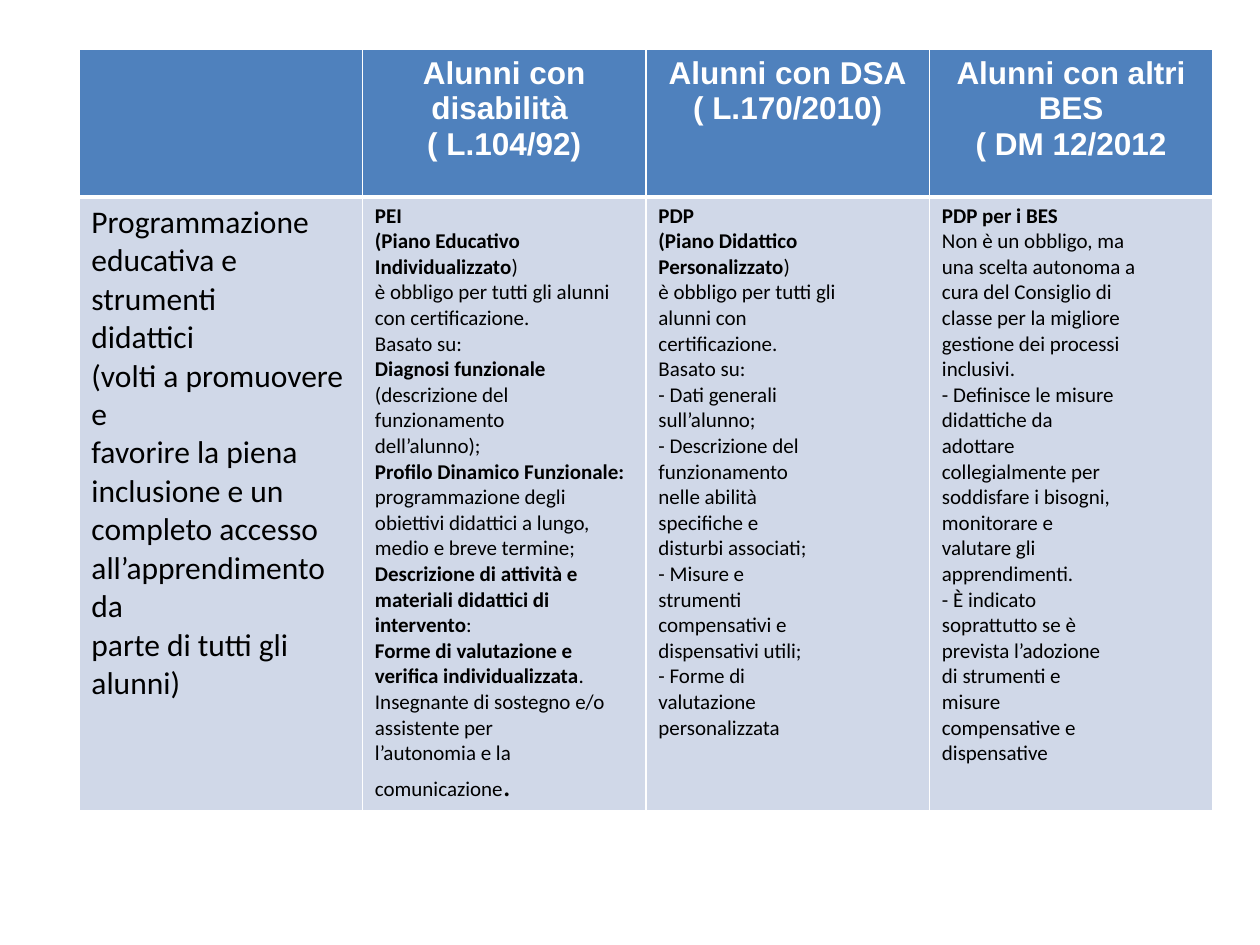
from dataclasses import dataclass

from lxml import etree
from pptx import Presentation
from pptx.dml.color import RGBColor
from pptx.enum.text import PP_ALIGN
from pptx.oxml.ns import qn
from pptx.table import _Cell
from pptx.text.text import _Paragraph
from pptx.util import Cm, Pt

CENTER = PP_ALIGN.CENTER
LEFT = PP_ALIGN.LEFT
BLUE = RGBColor(0x4F, 0x81, 0xBD)
PALE = RGBColor(0xD0, 0xD8, 0xE8)
WHITE = RGBColor(0xFF, 0xFF, 0xFF)
BLACK = RGBColor(0, 0, 0)
BOLD = "*"


@dataclass(frozen=True)
class Style:
    font: str
    size: int
    color: RGBColor
    fill: RGBColor
    align: PP_ALIGN
    edges: dict[str, int]


@dataclass(frozen=True)
class Entry:
    text: str
    style: Style


HEAD = Style("Arial", 18, WHITE, BLUE, CENTER, {"L": 1, "R": 1, "T": 1, "B": 3})
BODY_EDGES = {"L": 1, "R": 1, "T": 3, "B": 1}
LABEL = Style("Calibri", 18, BLACK, PALE, LEFT, BODY_EDGES)
BODY = Style("Calibri", 12, BLACK, PALE, LEFT, BODY_EDGES)

GOAL = """Programmazione
educativa e strumenti
didattici
(volti a promuovere e
favorire la piena
inclusione e un
completo accesso
all’apprendimento da
parte di tutti gli alunni)"""

PEI = """*PEI*
*(Piano Educativo*
*Individualizzato*)
è obbligo per tutti gli alunni
con certificazione.
Basato su:
*Diagnosi funzionale*
(descrizione del
funzionamento
dell’alunno);
*Profilo Dinamico Funzionale:*
programmazione degli
obiettivi didattici a lungo,
medio e breve termine;
*Descrizione di attività e*
*materiali didattici di*
*intervento*:
*Forme di valutazione e*
*verifica individualizzata*.
Insegnante di sostegno e/o
assistente per
l’autonomia e la
comunicazione"""

PDP = """*PDP*
*(Piano Didattico*
*Personalizzato*)
è obbligo per tutti gli
alunni con
certificazione.
Basato su:
- Dati generali
sull’alunno;
- Descrizione del
funzionamento
nelle abilità
specifiche e
disturbi associati;
- Misure e
strumenti
compensativi e
dispensativi utili;
- Forme di
valutazione
personalizzata"""

BES = """*PDP per i BES*
Non è un obbligo, ma
una scelta autonoma a
cura del Consiglio di
classe per la migliore
gestione dei processi
inclusivi.
- Definisce le misure
didattiche da
adottare
collegialmente per
soddisfare i bisogni,
monitorare e
valutare gli
apprendimenti.
- È indicato
soprattutto se è
prevista l’adozione
di strumenti e
misure
compensative e
dispensative"""

ROWS = [
    [
        Entry("", HEAD),
        Entry("*Alunni con disabilità *\n*( L.104/92)*", HEAD),
        Entry("*Alunni con DSA*\n*( L.170/2010)*", HEAD),
        Entry("*Alunni con altri BES*\n*( DM 12/2012*", HEAD),
    ],
    [Entry(GOAL, LABEL), Entry(PEI, BODY), Entry(PDP, BODY), Entry(BES, BODY)],
]
TALL = [Cm(2.97), Cm(12.19)]


def add_run(para: _Paragraph, text: str, style: Style, size: int, bold: bool) -> None:
    run = para.add_run()
    run.text = text
    run.font.name = style.font
    run.font.size = Pt(size)
    run.font.bold = bold
    run.font.color.rgb = style.color


def set_edges(cell: _Cell, edges: dict[str, int]) -> None:
    props = cell._tc.get_or_add_tcPr()
    for side, width in edges.items():
        line = etree.SubElement(props, qn(f"a:ln{side}"), w=str(Pt(width)))
        fill = etree.SubElement(line, qn("a:solidFill"))
        etree.SubElement(fill, qn("a:srgbClr"), val=str(WHITE))


def fill_cell(cell: _Cell, entry: Entry) -> None:
    style = entry.style
    set_edges(cell, style.edges)
    cell.fill.solid()
    cell.fill.fore_color.rgb = style.fill
    frame = cell.text_frame
    for i, line in enumerate(entry.text.split("\n")):
        para = frame.add_paragraph() if i else frame.paragraphs[0]
        para.alignment = style.align
        for k, part in enumerate(line.split(BOLD)):
            if part:
                add_run(para, part, style, style.size, k % 2 == 1)


def main() -> None:
    deck = Presentation()
    deck.slide_width, deck.slide_height = Cm(25.4), Cm(19.05)
    slide = deck.slides.add_slide(deck.slide_layouts[6])
    table = slide.shapes.add_table(
        len(ROWS), len(ROWS[0]), Cm(1.59), Cm(1), Cm(22.86), sum(TALL)
    ).table
    for r, (row, tall) in enumerate(zip(ROWS, TALL)):
        table.rows[r].height = tall
        for c, entry in enumerate(row):
            fill_cell(table.cell(r, c), entry)
    last = table.cell(1, 1).text_frame.paragraphs[-1]
    add_run(last, ".", BODY, 18, False)
    deck.save("out.pptx")


if __name__ == "__main__":
    main()
